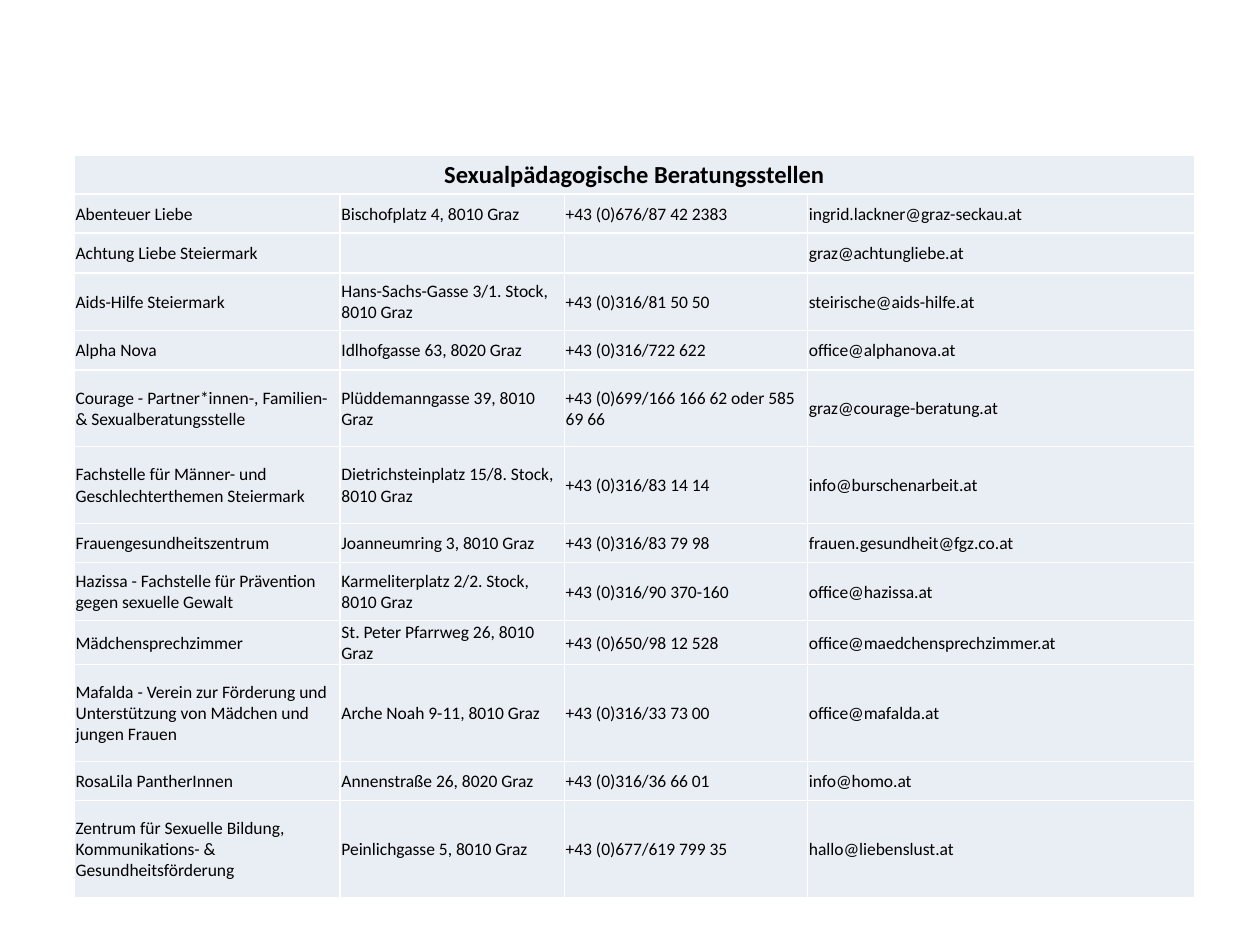
from dataclasses import dataclass

from lxml import etree
from pptx import Presentation
from pptx import util as u
from pptx.dml.color import RGBColor
from pptx.enum import text
from pptx.oxml import ns


@dataclass(frozen=True)
class Theme:
    font: str = "Calibri"
    ink: str = "000000"
    fill: str = "E9EDF4"
    rule: str = "FFFFFF"
    rule_width: float = 1
    title_size: float = 14
    body_size: float = 10
    inset: float = 0.01


THEME = Theme()
PAGE_WIDTH, PAGE_HEIGHT = 10, 7.5
TABLE_LEFT, TABLE_TOP = 0.59, 1.23
COLUMNS = (2.11, 1.78, 1.93, 3.07)

# Row heights, by the room the entry takes
LINE, TIGHT, DOUBLE, WIDE, TRIPLE = 0.31, 0.35, 0.46, 0.61, 0.77

TITLE = "Sexualpädagogische Beratungsstellen"

# Row height, then name, address, phone, e-mail
CENTRES = [
    (LINE, "Abenteuer Liebe", "Bischofplatz 4, 8010 Graz",
     "+43 (0)676/87 42 2383", "ingrid.lackner@graz-seckau.at"),
    (LINE, "Achtung Liebe Steiermark", "", "", "graz@achtungliebe.at"),
    (DOUBLE, "Aids-Hilfe Steiermark", "Hans-Sachs-Gasse 3/1. Stock, 8010 Graz",
     "+43 (0)316/81 50 50", "steirische@aids-hilfe.at"),
    (LINE, "Alpha Nova", "Idlhofgasse 63, 8020 Graz",
     "+43 (0)316/722 622", "office@alphanova.at"),
    (WIDE, "Courage - Partner*innen-, Familien- & Sexualberatungsstelle",
     "Plüddemanngasse 39, 8010 Graz",
     "+43 (0)699/166 166 62 oder 585 69 66", "graz@courage-beratung.at"),
    (WIDE, "Fachstelle für Männer- und Geschlechterthemen Steiermark",
     "Dietrichsteinplatz 15/8. Stock, 8010 Graz",
     "+43 (0)316/83 14 14", "info@burschenarbeit.at"),
    (LINE, "Frauengesundheitszentrum", "Joanneumring 3, 8010 Graz",
     "+43 (0)316/83 79 98", "frauen.gesundheit@fgz.co.at"),
    (DOUBLE, "Hazissa - Fachstelle für Prävention gegen sexuelle Gewalt",
     "Karmeliterplatz 2/2. Stock, 8010 Graz",
     "+43 (0)316/90 370-160", "office@hazissa.at"),
    (TIGHT, "Mädchensprechzimmer", "St. Peter Pfarrweg 26, 8010 Graz",
     "+43 (0)650/98 12 528", "office@maedchensprechzimmer.at"),
    (TRIPLE, "Mafalda - Verein zur Förderung und Unterstützung von Mädchen und jungen Frauen",
     "Arche Noah 9-11, 8010 Graz",
     "+43 (0)316/33 73 00", "office@mafalda.at"),
    (LINE, "RosaLila PantherInnen", "Annenstraße 26, 8020 Graz",
     "+43 (0)316/36 66 01", "info@homo.at"),
    (TRIPLE, "Zentrum für Sexuelle Bildung, Kommunikations- & Gesundheitsförderung",
     "Peinlichgasse 5, 8010 Graz",
     "+43 (0)677/619 799 35", "hallo@liebenslust.at"),
]


def add_borders(cell):
    """Rule all four sides; the lines must precede the fill in the XML."""
    properties = cell._tc.get_or_add_tcPr()
    for index, side in enumerate(("lnL", "lnR", "lnT", "lnB")):
        line = etree.Element(ns.qn(f"a:{side}"), w=str(u.Pt(THEME.rule_width)))
        solid = etree.SubElement(line, ns.qn("a:solidFill"))
        etree.SubElement(solid, ns.qn("a:srgbClr"), val=THEME.rule)
        properties.insert(index, line)


def style_cell(cell):
    cell.fill.solid()
    cell.fill.fore_color.rgb = RGBColor.from_string(THEME.fill)
    cell.margin_left = cell.margin_right = cell.margin_top = u.Inches(THEME.inset)
    cell.margin_bottom = 0
    cell.vertical_anchor = text.MSO_ANCHOR.MIDDLE
    add_borders(cell)


def write(cell, words, size=THEME.body_size, bold=False, align=text.PP_ALIGN.LEFT):
    para = cell.text_frame.paragraphs[0]
    para.alignment = align
    span = para.add_run()
    span.text = words
    span.font.name = THEME.font
    span.font.size = u.Pt(size)
    span.font.bold = bold
    span.font.color.rgb = RGBColor.from_string(THEME.ink)


def add_directory(page):
    heights = [LINE] + [height for height, *_ in CENTRES]
    frame = page.shapes.add_table(
        len(heights), len(COLUMNS), u.Inches(TABLE_LEFT), u.Inches(TABLE_TOP),
        u.Inches(sum(COLUMNS)), u.Inches(sum(heights)))
    table = frame.table
    table.first_row = table.horz_banding = False
    for column, width in zip(table.columns, COLUMNS):
        column.width = u.Inches(width)
    for row, height in zip(table.rows, heights):
        row.height = u.Inches(height)
    for cell in table.iter_cells():
        style_cell(cell)

    # Title across all columns
    table.cell(0, 0).merge(table.cell(0, len(COLUMNS) - 1))
    write(table.cell(0, 0), TITLE, size=THEME.title_size, bold=True,
          align=text.PP_ALIGN.CENTER)

    # One row for each centre
    for row, (_, *entries) in enumerate(CENTRES, start=1):
        for column, words in enumerate(entries):
            if words:
                write(table.cell(row, column), words)


def main():
    deck = Presentation()
    deck.slide_width = u.Inches(PAGE_WIDTH)
    deck.slide_height = u.Inches(PAGE_HEIGHT)
    page = deck.slides.add_slide(deck.slide_layouts[6])
    add_directory(page)
    deck.save("out.pptx")


if __name__ == "__main__":
    main()
